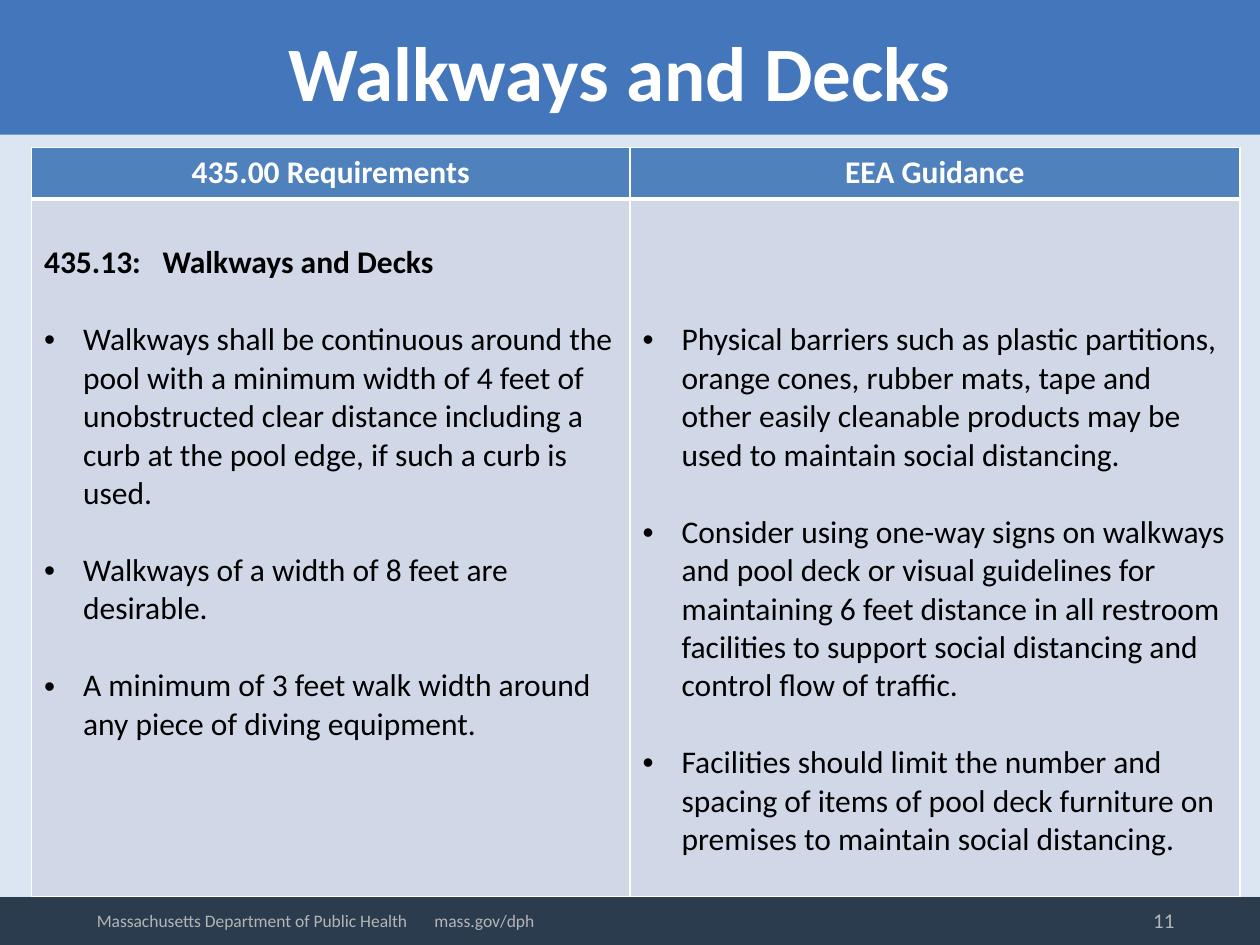
"""Builds the walkways and decks slide: a title band, a two-column table and a footer."""
from dataclasses import dataclass

from lxml import etree
from pptx import Presentation
from pptx import util as u
from pptx.dml.color import RGBColor
from pptx.enum import shapes, text
from pptx.oxml import ns


@dataclass(frozen=True)
class Theme:
    """Colours, type sizes and spacing of the slide."""
    font: str = "Calibri"
    page: str = "DCE6F2"
    band: str = "4376BB"
    footer: str = "2A3C4E"
    footer_ink: str = "B5B5B5"
    header: str = "4F81BD"
    body: str = "D0D8E8"
    light: str = "FFFFFF"
    dark: str = "000000"
    title_size: int = 44
    text_size: int = 18
    number_size: int = 12
    credit_size: int = 10
    line_pitch: int = 22
    indent: float = 0.31


THEME = Theme()
WIDTH, HEIGHT = 10, 7.5
TABLE_LEFT, TABLE_TOP = 0.25, 1.17
COLUMNS, ROWS = (4.75, 4.84), (0.41, 5.5)
ALIGN = text.PP_ALIGN
HEADINGS = ("435.00 Requirements", "EEA Guidance")
SECTION = "435.13:\tWalkways and Decks"
REQUIREMENTS = (
    "Walkways shall be continuous around the pool with a minimum width of 4 feet of "
    "unobstructed clear distance including a curb at the pool edge, if such a curb is used.",
    "Walkways of a width of 8 feet are desirable.",
    "A minimum of 3 feet walk width around any piece of diving equipment.",
)
GUIDANCE = (
    "Physical barriers such as plastic partitions, orange cones, rubber mats, tape and other "
    "easily cleanable products may be used to maintain social distancing.",
    "Consider using one-way signs on walkways and pool deck or visual guidelines for "
    "maintaining 6 feet distance in all restroom facilities to support social distancing "
    "and control flow of traffic.",
    "Facilities should limit the number and spacing of items of pool deck furniture on "
    "premises to maintain social distancing.",
)


def add_child(parent, tag, **attributes):
    """Append a DrawingML element and return it."""
    return etree.SubElement(parent, ns.qn(tag), {k: str(v) for k, v in attributes.items()})


def paint(fill, colour):
    """Give a fill one solid colour."""
    fill.solid()
    fill.fore_color.rgb = RGBColor.from_string(colour)


def write(paragraph, words, size, colour, bold=False, align=ALIGN.LEFT):
    """Add one styled run to a paragraph."""
    paragraph.alignment = align
    run = paragraph.add_run()
    run.text = words
    run.font.name, run.font.size, run.font.bold = THEME.font, u.Pt(size), bold
    run.font.color.rgb = RGBColor.from_string(colour)


def set_tab(paragraph, position):
    """Set a left tab stop, in inches."""
    stops = add_child(paragraph._p.get_or_add_pPr(), "a:tabLst")
    add_child(stops, "a:tab", pos=u.Inches(position), algn="l")


def set_bullet(paragraph):
    """Turn a paragraph into a hanging bullet."""
    props = paragraph._p.get_or_add_pPr()
    props.set("marL", str(u.Inches(THEME.indent)))
    props.set("indent", str(-u.Inches(THEME.indent)))
    add_child(props, "a:buFont", typeface="Arial")
    add_child(props, "a:buChar", char="•")


def add_band(slide, top, height, colour):
    """Add a full-width colour band."""
    band = slide.shapes.add_shape(
        shapes.MSO_SHAPE.RECTANGLE, 0, u.Inches(top), u.Inches(WIDTH), u.Inches(height))
    band.shadow.inherit = False
    paint(band.fill, colour)
    band.line.fill.background()


def add_label(slide, box, words, size, colour, **style):
    """Add a vertically centred text box and return its paragraph."""
    frame = slide.shapes.add_textbox(*(u.Inches(side) for side in box)).text_frame
    frame.word_wrap = True
    frame.vertical_anchor = text.MSO_ANCHOR.MIDDLE
    write(frame.paragraphs[0], words, size, colour, **style)
    return frame.paragraphs[0]


def style_cell(cell, colour, bottom=1):
    """Give a cell white borders and a fill."""
    props = cell._tc.get_or_add_tcPr()
    for side, weight in (("L", 1), ("R", 1), ("T", 1), ("B", bottom)):
        line = add_child(props, f"a:ln{side}", w=u.Pt(weight))
        add_child(add_child(line, "a:solidFill"), "a:srgbClr", val=THEME.light)
    paint(cell.fill, colour)


def fill_body(cell, bullets, blank_lines, section=None):
    """Write an optional section heading and spaced bullets below some blank lines."""
    pitch = u.Pt(THEME.line_pitch)
    cell.margin_top = u.Inches(0.05) + blank_lines * pitch
    cell.margin_bottom = u.Inches(0.05) + pitch
    frame = cell.text_frame
    entries = ([section] if section else []) + list(bullets)
    for index, words in enumerate(entries):
        paragraph = frame.add_paragraph() if index else frame.paragraphs[0]
        if index:
            paragraph.space_before = pitch
        if words == section:
            set_tab(paragraph, 0.94)
        else:
            set_bullet(paragraph)
        write(paragraph, words, THEME.text_size, THEME.dark, bold=words == section)


def add_comparison(slide):
    """Add the table of requirements and guidance."""
    table = slide.shapes.add_table(
        len(ROWS), len(COLUMNS), u.Inches(TABLE_LEFT), u.Inches(TABLE_TOP),
        u.Inches(sum(COLUMNS)), u.Inches(sum(ROWS))).table
    table.horz_banding = False
    for row, height in zip(table.rows, ROWS):
        row.height = u.Inches(height)
    for index, (width, heading) in enumerate(zip(COLUMNS, HEADINGS)):
        table.columns[index].width = u.Inches(width)
        header = table.cell(0, index)
        style_cell(header, THEME.header, bottom=3)
        write(header.text_frame.paragraphs[0], heading, THEME.text_size, THEME.light,
              bold=True, align=ALIGN.CENTER)
        style_cell(table.cell(1, index), THEME.body)
    fill_body(table.cell(1, 0), REQUIREMENTS, 1, SECTION)
    fill_body(table.cell(1, 1), GUIDANCE, 3)


def main():
    """Build and save the slide."""
    deck = Presentation()
    deck.slide_width, deck.slide_height = u.Inches(WIDTH), u.Inches(HEIGHT)
    slide = deck.slides.add_slide(deck.slide_layouts[6])
    paint(slide.background.fill, THEME.page)
    add_band(slide, 0, 1.07, THEME.band)
    add_band(slide, 7.12, 0.38, THEME.footer)
    add_label(slide, (0.42, 0, 9, 1.12), "Walkways and Decks", THEME.title_size,
              THEME.light, bold=True, align=ALIGN.CENTER)
    add_comparison(slide)
    add_label(slide, (7.18, 7.1, 2.24, 0.4), "11", THEME.number_size,
              THEME.footer_ink, align=ALIGN.RIGHT)
    credit = add_label(slide, (0.67, 7.12, 4.17, 0.37),
                       "Massachusetts Department of Public Health\tmass.gov/dph",
                       THEME.credit_size, THEME.footer_ink)
    set_tab(credit, 2.68)
    deck.save("out.pptx")


if __name__ == "__main__":
    main()
